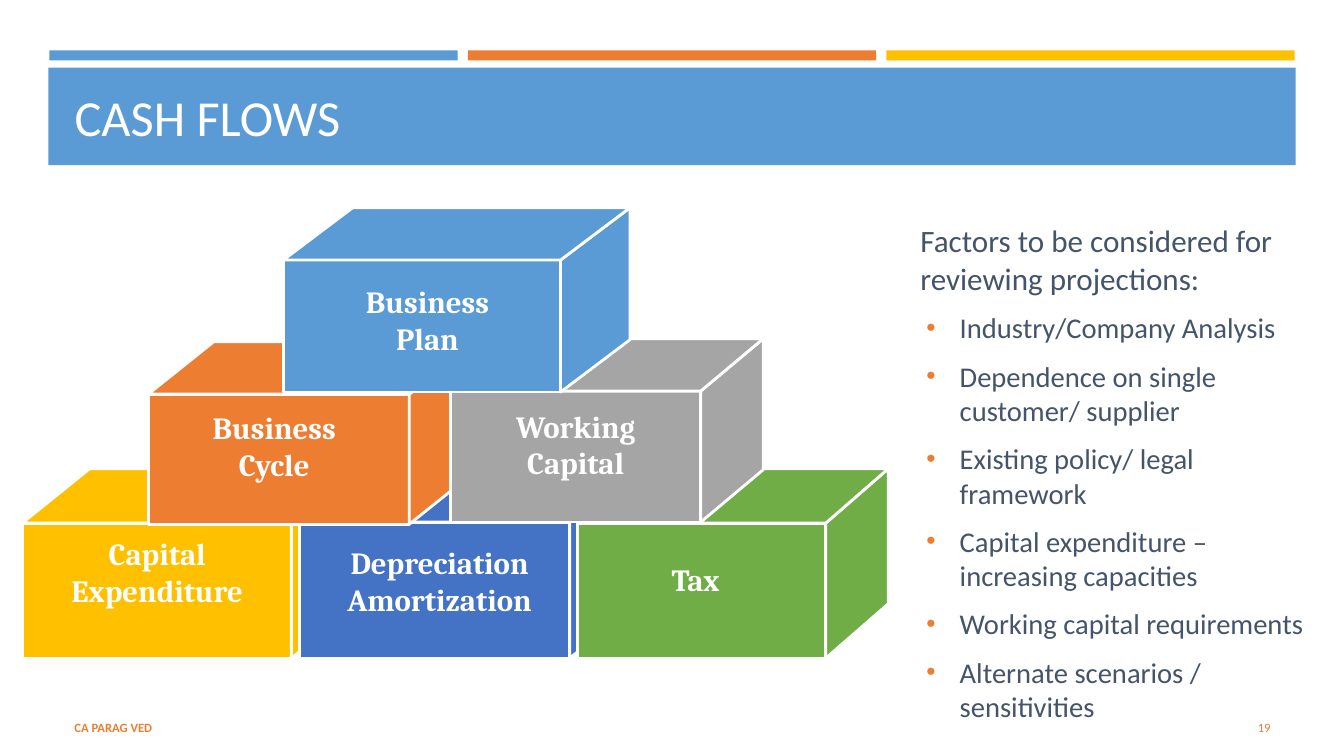
"""Build the cash flows slide: a pyramid of blocks beside a list of review factors."""
from dataclasses import dataclass

from lxml.etree import SubElement
from pptx import Presentation
from pptx.dml.color import RGBColor
from pptx.enum.shapes import MSO_SHAPE
from pptx.enum.text import MSO_ANCHOR, MSO_AUTO_SIZE, PP_ALIGN
from pptx.oxml.ns import qn
from pptx.util import Pt

PX = 9144
SLIDE_SIZE = (1333, 750)


@dataclass(frozen=True)
class Theme:
    """Colours, fonts and type sizes."""
    blue: str = "5B9BD5"
    orange: str = "ED7D31"
    yellow: str = "FFC000"
    indigo: str = "4472C4"
    green: str = "70AD47"
    grey: str = "A5A5A5"
    slate: str = "44546A"
    white: str = "FFFFFF"
    body_font: str = "Calibri"
    block_font: str = "Cambria"
    title: float = 36
    block: float = 22
    lead: float = 22.2
    factor: float = 20.4
    footer: float = 9


THEME = Theme()

TITLE = "CASH FLOWS"
FOOTER = "CA PARAG VED"
PAGE = "19"
LEAD = "Factors to be considered for reviewing projections:"
FACTORS = [
    "Industry/Company Analysis",
    "Dependence on single customer/ supplier",
    "Existing policy/ legal framework",
    "Capital expenditure – increasing capacities",
    "Working capital requirements",
    "Alternate scenarios / sensitivities",
]
BLOCKS = [
    (["Capital", "Expenditure"], THEME.yellow, (22, 519, 267, 134), (156, 531)),
    (["Depreciation", "Amortization"], THEME.indigo, (297, 518, 268, 135), (436, 539)),
    (["Tax"], THEME.green, (573, 519, 246, 134), (690, 556)),
    (["Business", "Cycle"], THEME.orange, (147, 391, 259, 129), (272, 406)),
    (["Working", "Capital"], THEME.grey, (447, 388, 248, 130), (571, 404)),
    (["Business", "Plan"], THEME.blue, (281, 258, 275, 131), (424, 281)),
]
ACCENTS = [THEME.blue, THEME.orange, THEME.yellow]
ACCENT_LEFT, ACCENT_TOP, ACCENT_WIDTH, ACCENT_HEIGHT, ACCENT_STEP = 49, 50, 405, 10, 415
BANNER = (48, 67, 1237, 97)
TITLE_BOX = (64, 74, 1206, 83)
FACTORS_BOX = (873, 215, 431, 438)
FOOTER_BOX = (64, 702, 756, 40)
PAGE_BOX = (1155, 702, 115, 40)
LABEL_WIDTH, LABEL_LINE = 240, 38
LEAD_INDENT, FACTOR_INDENT, FACTOR_HANGING = 30, 69, 33


def emu(box):
    return [value * PX for value in box]


def paint(shape, color, outlined=False):
    shape.shadow.inherit = False
    shape.fill.solid()
    shape.fill.fore_color.rgb = RGBColor.from_string(color)
    if outlined:
        shape.line.color.rgb = RGBColor.from_string(THEME.white)
        shape.line.width = Pt(2)
    else:
        shape.line.fill.background()


def add_rectangle(slide, box, color, outlined=False):
    shape = slide.shapes.add_shape(MSO_SHAPE.RECTANGLE, *emu(box))
    paint(shape, color, outlined)


def add_face(slide, points, color):
    builder = slide.shapes.build_freeform(*points[0], scale=PX)
    builder.add_line_segments(points[1:], close=True)
    paint(builder.convert_to_shape(), color, outlined=True)


def add_block(slide, box, color):
    left, top, width, height = box
    right, bottom = left + width, top + height
    shift, rise = round(width / 4), round(height * 0.4)
    back_corner = (right + shift, top - rise)
    add_rectangle(slide, box, color, outlined=True)
    add_face(slide, [(right, top), back_corner, (right + shift, bottom - rise), (right, bottom)], color)
    add_face(slide, [back_corner, (left + shift, top - rise), (left, top), (right, top)], color)


def prepare_frame(shape, anchor=MSO_ANCHOR.TOP, margin=None):
    frame = shape.text_frame
    frame.word_wrap = True
    frame.auto_size = MSO_AUTO_SIZE.NONE
    frame.vertical_anchor = anchor
    if margin is not None:
        frame.margin_left = frame.margin_right = margin
        frame.margin_top = frame.margin_bottom = margin
    return frame


def add_frame(slide, box, **options):
    return prepare_frame(slide.shapes.add_textbox(*emu(box)), **options)


def add_bullet(properties):
    color = SubElement(properties, qn("a:buClr"))
    SubElement(color, qn("a:srgbClr"), val=THEME.orange)
    SubElement(properties, qn("a:buSzPct"), val="92000")
    SubElement(properties, qn("a:buFont"), typeface="Arial")
    SubElement(properties, qn("a:buChar"), char="•")


def write(frame, text, *, size, color, font=THEME.body_font, bold=False, align=PP_ALIGN.LEFT,
          indent=0, hanging=0, before=0, after=0, bullet=False):
    paragraph = frame.paragraphs[0] if not frame.text else frame.add_paragraph()
    properties = paragraph._p.get_or_add_pPr()
    properties.set("marL", str(indent * PX))
    properties.set("indent", str(-hanging * PX))
    if bullet:
        add_bullet(properties)
    paragraph.alignment = align
    paragraph.space_before, paragraph.space_after = Pt(before), Pt(after)
    run = paragraph.add_run()
    run.text = text
    run.font.name, run.font.size, run.font.bold = font, Pt(size), bold
    run.font.color.rgb = RGBColor.from_string(color)


def add_header(slide):
    for index, color in enumerate(ACCENTS):
        left = ACCENT_LEFT + index * ACCENT_STEP
        add_rectangle(slide, (left, ACCENT_TOP, ACCENT_WIDTH, ACCENT_HEIGHT), color)
    add_rectangle(slide, BANNER, THEME.blue)
    title = slide.shapes.title
    title.left, title.top, title.width, title.height = emu(TITLE_BOX)
    slide.shapes._spTree.append(title._element)
    write(prepare_frame(title, anchor=MSO_ANCHOR.MIDDLE), TITLE, size=THEME.title, color=THEME.white)


def add_pyramid(slide):
    for _, color, box, _ in BLOCKS:
        add_block(slide, box, color)
    for lines, _, _, (center, top) in BLOCKS:
        box = (center - LABEL_WIDTH // 2, top, LABEL_WIDTH, LABEL_LINE * len(lines))
        frame = add_frame(slide, box, margin=0)
        for line in lines:
            write(frame, line, size=THEME.block, color=THEME.white, font=THEME.block_font,
                  bold=True, align=PP_ALIGN.CENTER)


def add_factors(slide):
    frame = add_frame(slide, FACTORS_BOX)
    write(frame, LEAD, size=THEME.lead, color=THEME.slate, indent=LEAD_INDENT, after=6)
    for factor in FACTORS:
        write(frame, factor, size=THEME.factor, color=THEME.slate, indent=FACTOR_INDENT,
              hanging=FACTOR_HANGING, before=4, after=6, bullet=True)


def add_footer(slide):
    for text, box, bold, align in [(PAGE, PAGE_BOX, False, PP_ALIGN.RIGHT),
                                   (FOOTER, FOOTER_BOX, True, PP_ALIGN.LEFT)]:
        frame = add_frame(slide, box, anchor=MSO_ANCHOR.MIDDLE)
        write(frame, text, size=THEME.footer, color=THEME.orange, bold=bold, align=align)


def main():
    presentation = Presentation()
    presentation.slide_width, presentation.slide_height = emu(SLIDE_SIZE)
    slide = presentation.slides.add_slide(presentation.slide_layouts.get_by_name("Title Only"))
    add_header(slide)
    add_pyramid(slide)
    add_factors(slide)
    add_footer(slide)
    presentation.save("out.pptx")


if __name__ == "__main__":
    main()
